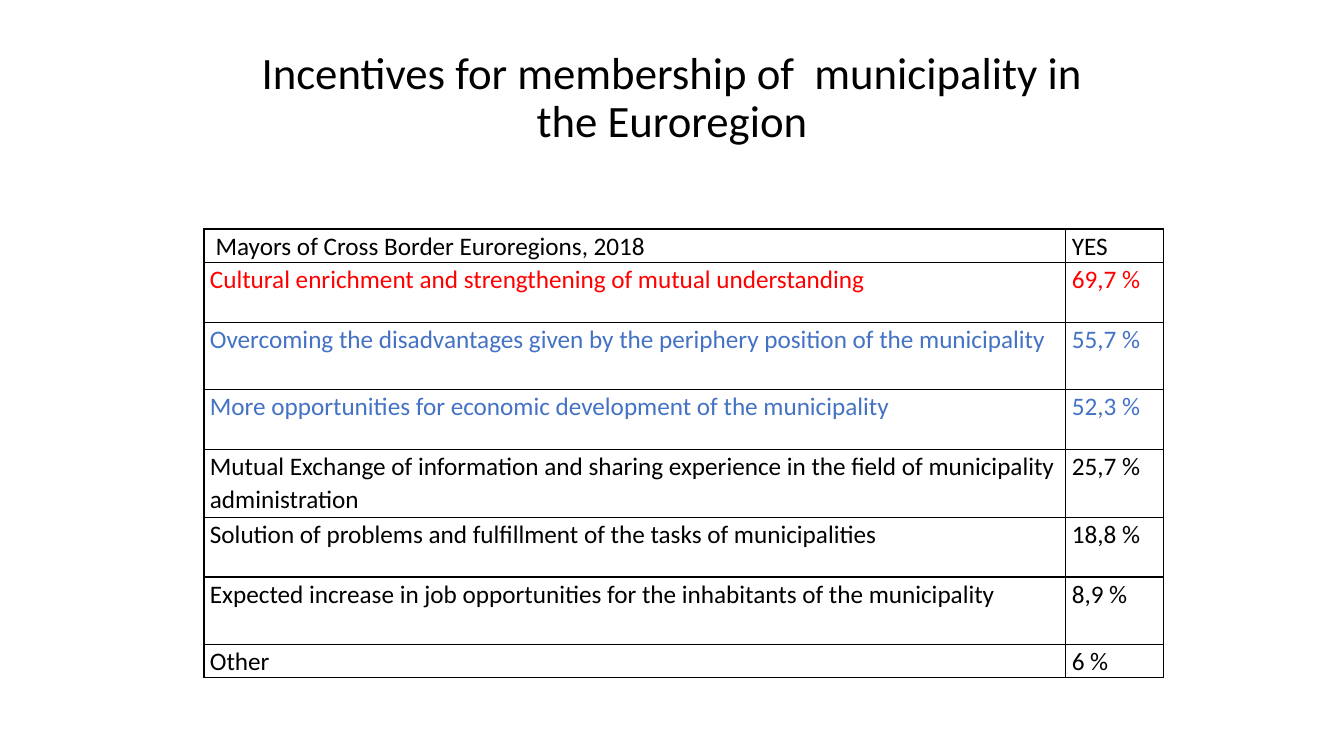
"""Build a slide with a table of incentives for joining a Euroregion."""
from dataclasses import dataclass

from lxml import etree
from pptx import Presentation
from pptx.dml.color import RGBColor
from pptx.enum.text import MSO_ANCHOR, PP_ALIGN
from pptx.oxml.ns import qn
from pptx.util import Cm, Pt

MIDDLE = MSO_ANCHOR.MIDDLE
TOP = MSO_ANCHOR.TOP
CENTER = PP_ALIGN.CENTER
LEFT = PP_ALIGN.LEFT


@dataclass(frozen=True)
class Theme:
    font: str = "Calibri"
    black: str = "000000"
    red: str = "FF0000"
    blue: str = "4472C4"
    head: int = 32
    body: int = 18
    rule: int = 1


theme = Theme()


def write(frame, text, size, color, align, space):
    para = frame.paragraphs[0]
    para.alignment = align
    para.line_spacing = space
    run = para.add_run()
    run.text = text
    style = {"name": theme.font, "size": Pt(size)}
    for key, value in style.items():
        setattr(run.font, key, value)
    run.font.color.rgb = RGBColor.from_string(color)


def border(cell):
    props = cell._tc.get_or_add_tcPr()
    for index, side in enumerate(("lnL", "lnR", "lnT", "lnB")):
        line = etree.Element(qn(f"a:{side}"), w=str(Pt(theme.rule)))
        fill = etree.SubElement(line, qn("a:solidFill"))
        etree.SubElement(fill, qn("a:srgbClr"), val=theme.black)
        props.insert(index, line)


deck = Presentation()
deck.slide_width = Cm(33.87)
deck.slide_height = Cm(19.05)
slide = deck.slides.add_slide(deck.slide_layouts[6])

title = slide.shapes.add_textbox(Cm(5.51), Cm(1.6), Cm(22.86), Cm(1.8))
frame = title.text_frame
frame.word_wrap = True
frame.vertical_anchor = MIDDLE
write(frame, "Incentives for membership of  municipality in the Euroregion",
      theme.head, theme.black, CENTER, 0.9)

rows = [
    (" Mayors of Cross Border Euroregions, 2018", "YES", theme.black, 0.84),
    ("Cultural enrichment and strengthening of mutual understanding",
     "69,7 %", theme.red, 1.51),
    ("Overcoming the disadvantages given by the periphery position of the municipality",
     "55,7 %", theme.blue, 1.7),
    ("More opportunities for economic development of the municipality",
     "52,3 %", theme.blue, 1.51),
    ("Mutual Exchange of information and sharing experience in the field of "
     "municipality administration", "25,7 %", theme.black, 1.7),
    ("Solution of problems and fulfillment of the tasks of municipalities",
     "18,8 %", theme.black, 1.51),
    ("Expected increase in job opportunities for the inhabitants of the municipality",
     "8,9 %", theme.black, 1.7),
    ("Other", "6 %", theme.black, 0.84),
]
widths = (21.72, 2.46)
total = sum(row[-1] for row in rows)

table = slide.shapes.add_table(len(rows), len(widths), Cm(5.14), Cm(5.77),
                               Cm(sum(widths)), Cm(total)).table
for flag in ("first_row", "horz_banding"):
    setattr(table, flag, False)
for column, width in zip(table.columns, widths):
    column.width = Cm(width)

layout = {
    "margin_left": Cm(0.15),
    "margin_right": Cm(0.15),
    "margin_top": Cm(0),
    "margin_bottom": Cm(0),
    "vertical_anchor": TOP,
}
for row, (reason, share, color, height) in zip(table.rows, rows):
    row.height = Cm(height)
    for cell, text in zip(row.cells, (reason, share)):
        for key, value in layout.items():
            setattr(cell, key, value)
        cell.fill.background()
        border(cell)
        write(cell.text_frame, text, theme.body, color, LEFT, 1.07)

deck.save("out.pptx")
